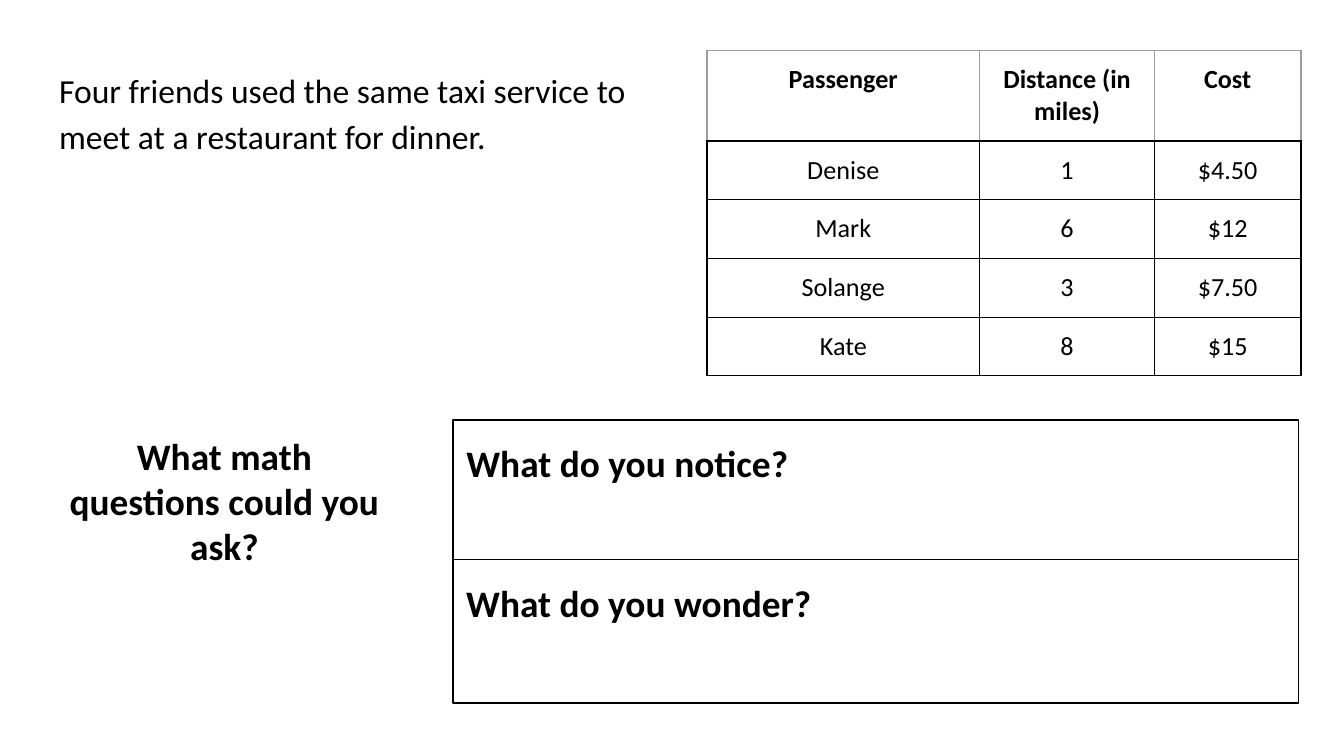
from dataclasses import dataclass

from lxml.etree import SubElement
from pptx import Presentation
from pptx.dml.color import RGBColor
from pptx.enum.shapes import MSO_SHAPE as Shape
from pptx.enum.text import MSO_ANCHOR as Anchor, MSO_AUTO_SIZE as AutoSize, PP_ALIGN as Align
from pptx.oxml.ns import qn
from pptx.util import Emu, Pt

PX = 4572


@dataclass(frozen=True)
class Theme:
    font: str = "Calibri"
    ink: str = "000000"
    paper: str = "FFFFFF"
    header_line: str = "9E9E9E"
    line_width: float = 0.75
    story_size: int = 18
    prompt_size: int = 20
    table_size: int = 14


THEME = Theme()

FARES = [
    ("Passenger", "Distance (in miles)", "Cost"),
    ("Denise", "1", "$4.50"),
    ("Mark", "6", "$12"),
    ("Solange", "3", "$7.50"),
    ("Kate", "8", "$15"),
]


def px(length):
    return Emu(length * PX)


def place(shape, box):
    shape.left, shape.top, shape.width, shape.height = map(px, box)


def set_margins(holder):
    holder.margin_left = holder.margin_right = px(20)
    holder.margin_top = holder.margin_bottom = px(20)


def format_para(para, size, bold=False, align=Align.LEFT):
    para.alignment = align
    for span in para.runs:
        span.font.name = THEME.font
        span.font.size = Pt(size)
        span.font.bold = bold
        span.font.color.rgb = RGBColor.from_string(THEME.ink)


def write(shape, text, size, bold=False, align=Align.LEFT, spacing=1.15, after=16):
    frame = shape.text_frame
    frame.text = text
    frame.word_wrap = True
    frame.auto_size = AutoSize.NONE
    frame.vertical_anchor = Anchor.TOP
    set_margins(frame)
    para = frame.paragraphs[0]
    format_para(para, size, bold, align)
    para.line_spacing = spacing
    para.space_before = Pt(0)
    para.space_after = Pt(after)


def remove_bullet(shape):
    properties = shape.text_frame.paragraphs[0]._p.get_or_add_pPr()
    properties.set("marL", "0")
    properties.set("indent", "0")
    SubElement(properties, qn("a:buNone"))


def outline(shape):
    shape.line.color.rgb = RGBColor.from_string(THEME.ink)
    shape.line.width = Pt(THEME.line_width)


def add_borders(cell, colors):
    properties = cell._tc.get_or_add_tcPr()
    for side, color in zip("LRTB", colors):
        line = SubElement(properties, qn(f"a:ln{side}"), w=str(Pt(THEME.line_width)))
        fill = SubElement(line, qn("a:solidFill"))
        SubElement(fill, qn("a:srgbClr"), val=color)


def build_story(page, box):
    place(page.shapes.title, box)
    write(page.shapes.title,
          "Four friends used the same taxi service to meet at a restaurant for dinner.",
          THEME.story_size)


def build_cell(cell, text, is_header):
    cell.text = text
    set_margins(cell)
    format_para(cell.text_frame.paragraphs[0], THEME.table_size, is_header, Align.CENTER)
    edge = THEME.header_line if is_header else THEME.ink
    add_borders(cell, (edge, edge, edge, THEME.ink))
    if is_header:
        cell.fill.background()
    else:
        cell.fill.solid()
        cell.fill.fore_color.rgb = RGBColor.from_string(THEME.paper)


def build_fares(page, box):
    table = page.shapes.add_table(len(FARES), len(FARES[0]), *map(px, box)).table
    table.first_row = table.horz_banding = False
    for column, width in zip(table.columns, (406, 260, 218)):
        column.width = px(width)
    for index, (row, values) in enumerate(zip(table.rows, FARES)):
        row.height = px(86 if index else 134)
        for cell, text in zip(row.cells, values):
            build_cell(cell, text, index == 0)


def build_question(page, box):
    question = page.placeholders[1]
    place(question, box)
    write(question, "What math questions could you ask?", THEME.prompt_size,
          True, Align.CENTER, spacing=1, after=0)
    remove_bullet(question)


def build_prompts(page, box):
    left, top, width, height = box
    notice_height = 208
    notice = page.placeholders[2]
    place(notice, (left, top, width, notice_height))
    wonder = page.shapes.add_shape(
        Shape.RECTANGLE,
        *map(px, (left, top + notice_height, width, height - notice_height)))
    wonder.shadow.inherit = False
    wonder.fill.background()
    for shape, text in ((notice, "What do you notice?"), (wonder, "What do you wonder?")):
        write(shape, text, THEME.prompt_size, True)
        outline(shape)
    remove_bullet(notice)


def main():
    deck = Presentation()
    deck.slide_width, deck.slide_height = px(2000), px(1125)
    page = deck.slides.add_slide(deck.slide_layouts[3])
    build_story(page, (68, 75, 984, 430))
    build_fares(page, (1052, 75, 884, 478))
    build_question(page, (68, 625, 532, 380))
    build_prompts(page, (674, 625, 1258, 421))
    deck.save("out.pptx")


if __name__ == "__main__":
    main()
